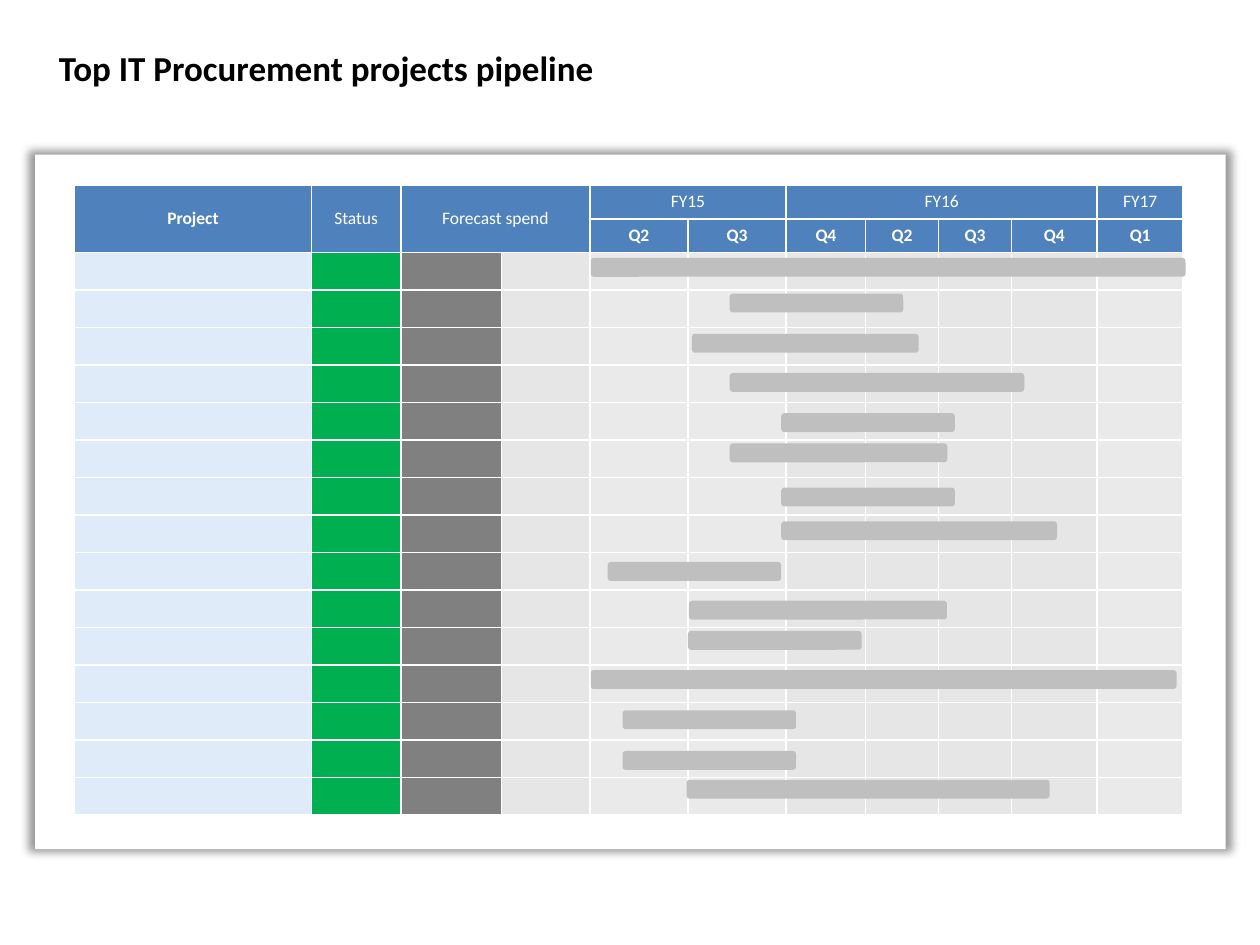
from lxml import etree
from pptx import Presentation
from pptx import util as u
from pptx.dml.color import RGBColor
from pptx.enum import shapes, text
from pptx.oxml import ns

Cm = u.Cm
FONT = "Calibri"
COLORS = {
    "text": "000000", "white": "FFFFFF", "header": "4F81BD",
    "project": "DFEBF9", "status": "00B050", "spend": "808080",
    "even": "E6E6E6", "odd": "EAEAEA", "bar": "BFBFBF",
}

# Table measures in cm
COLUMNS = [4.78, 1.8, 2.03, 1.78, 1.98, 1.98, 1.6, 1.47, 1.47, 1.73, 1.73]
BODY_FILLS = (["project", "status", "spend", "even"]
              + ["odd"] * 2 + ["even"] * 4 + ["odd"])
HEADER_ROWS, PROJECTS = 2, 15
HEADER_HEIGHT = 0.68
FIRST_QUARTER = 4

# Header cells: row, column, rows spanned, columns spanned, label, bold
HEADERS = [
    (0, 0, 2, 1, "Project", True),
    (0, 1, 2, 1, "Status", False),
    (0, 2, 2, 2, "Forecast spend", False),
    (0, 4, 1, 2, "FY15", False),
    (0, 6, 1, 4, "FY16", False),
    (0, 10, 1, 1, "FY17", False),
] + [(1, FIRST_QUARTER + i, 1, 1, quarter, True)
     for i, quarter in enumerate(["Q2", "Q3", "Q4", "Q2", "Q3", "Q4", "Q1"])]

# Bars: left, top and width in cm from the corner of the timeline
BAR_HEIGHT = 0.38
BARS = [
    (0.02, 0.11, 11.99), (2.82, 0.83, 3.5), (2.06, 1.64, 4.57),
    (2.82, 2.43, 5.94), (3.86, 3.24, 3.5), (2.82, 3.85, 4.39),
    (3.86, 4.74, 3.5), (3.86, 5.42, 5.56), (0.36, 6.24, 3.5),
    (2, 7.02, 5.2), (1.98, 7.63, 3.5), (0.02, 8.42, 11.81),
    (0.66, 9.23, 3.5), (0.66, 10.05, 3.5), (1.95, 10.63, 7.32),
]


def rgb(name):
    return RGBColor.from_string(COLORS[name])


def style(p, size, color, bold=False):
    p.font.name, p.font.size, p.font.bold = FONT, u.Pt(size), bold
    p.font.color.rgb = rgb(color)


def add_block(s, kind, box, color):
    sp = s.shapes.add_shape(kind, *map(Cm, box))
    sp.shadow.inherit = False
    sp.fill.solid()
    sp.fill.fore_color.rgb = rgb(color)
    sp.line.fill.background()
    return sp


def add_title(s, box):
    tf = s.shapes.add_textbox(*map(Cm, box)).text_frame
    tf.word_wrap = True
    tf.vertical_anchor = text.MSO_ANCHOR.MIDDLE
    p = tf.paragraphs[0]
    p.text = "Top IT Procurement projects pipeline"
    p.line_spacing = 0.9
    style(p, 20, "text", True)


def add_panel(s, box):
    """White panel with a soft shadow on every side."""
    sp = add_block(s, shapes.MSO_SHAPE.RECTANGLE, box, "white")
    effects = sp._element.spPr.find(ns.qn("a:effectLst"))
    shadow = etree.SubElement(
        effects, ns.qn("a:outerShdw"), blurRad=str(u.Pt(5)), dist="0",
        sx="101000", sy="101000", algn="ctr", rotWithShape="0")
    color = etree.SubElement(shadow, ns.qn("a:srgbClr"), val=COLORS["text"])
    etree.SubElement(color, ns.qn("a:alpha"), val="40000")


def format_cell(cell, fill):
    """Fill the cell and give it white borders; the fill follows them in XML."""
    tcPr = cell._tc.get_or_add_tcPr()
    for side in ("lnL", "lnR", "lnT", "lnB"):
        ln = etree.SubElement(tcPr, ns.qn("a:" + side), w=str(u.Pt(1)))
        solid = etree.SubElement(ln, ns.qn("a:solidFill"))
        etree.SubElement(solid, ns.qn("a:srgbClr"), val=COLORS["white"])
    cell.fill.solid()
    cell.fill.fore_color.rgb = rgb(fill)
    style(cell.text_frame.paragraphs[0], 10, "white")


def add_table(s, box):
    rows = HEADER_ROWS + PROJECTS
    table = s.shapes.add_table(rows, len(COLUMNS), *map(Cm, box)).table
    for column, width in zip(table.columns, COLUMNS):
        column.width = Cm(width)
    body_height = (box[3] - HEADER_ROWS * HEADER_HEIGHT) / PROJECTS
    for i, row in enumerate(table.rows):
        is_header = i < HEADER_ROWS
        row.height = Cm(HEADER_HEIGHT if is_header else body_height)
        for cell, fill in zip(row.cells, BODY_FILLS):
            format_cell(cell, "header" if is_header else fill)

    for row, col, height, width, label, bold in HEADERS:
        cell = table.cell(row, col)
        if height * width > 1:
            cell.merge(table.cell(row + height - 1, col + width - 1))
        if height > 1:
            cell.vertical_anchor = text.MSO_ANCHOR.MIDDLE
        p = cell.text_frame.paragraphs[0]
        p.text = label
        p.alignment = text.PP_ALIGN.CENTER
        style(p, 10, "white", bold)


def add_bars(s, box):
    """Place the project bars on the timeline of the table in this box."""
    left = box[0] + sum(COLUMNS[:FIRST_QUARTER])
    top = box[1] + HEADER_ROWS * HEADER_HEIGHT
    for x, y, width in BARS:
        add_block(s, shapes.MSO_SHAPE.ROUNDED_RECTANGLE,
                  (left + x, top + y, width, BAR_HEIGHT), "bar")


def main():
    prs = Presentation()
    prs.slide_width, prs.slide_height = Cm(25.4), Cm(19.05)
    s = prs.slides.add_slide(prs.slide_layouts[6])
    add_title(s, (0.94, 0.91, 19.71, 1.02))
    add_panel(s, (0.71, 3.12, 24, 14))
    pipeline = (1.5, 3.73, sum(COLUMNS), 12.7)
    add_table(s, pipeline)
    add_bars(s, pipeline)
    prs.save("out.pptx")


if __name__ == "__main__":
    main()
